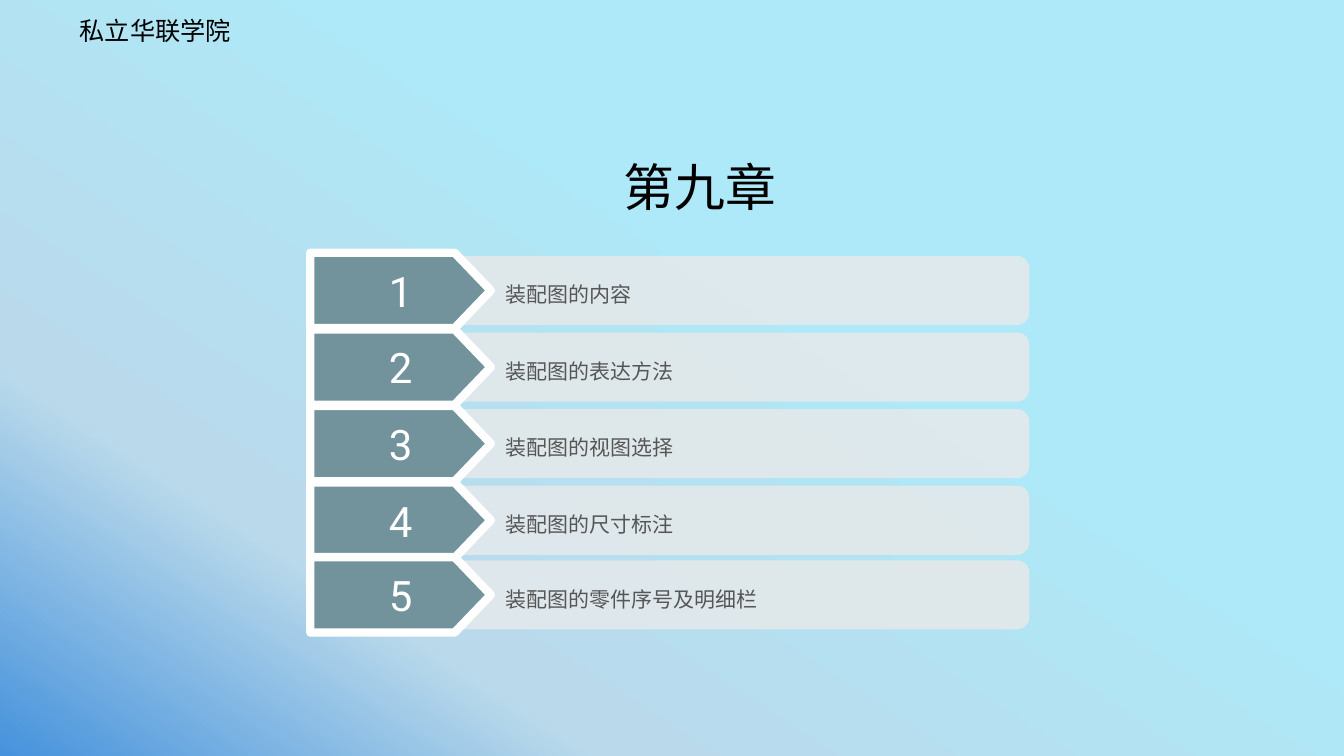
"""Build the chapter nine contents slide with five numbered section bars."""
import math

from lxml import etree
from pptx import Presentation
from pptx.dml.color import RGBColor
from pptx.enum import shapes, text
from pptx.oxml import ns
from pptx.util import Cm, Pt

COLORS = {
    "black": "000000",
    "white": "FFFFFF",
    "arrow": "72939C",
    "bar": "E3E9EB",
    "label": "565656",
    "deep": "4692DC",
    "haze": "BADAEB",
    "sky": "ADE9F8",
}
CJK_FONT = "Noto Sans CJK JP"
SECTIONS = [
    (6.45, "装配图的内容"),
    (8.38, "装配图的表达方法"),
    (10.31, "装配图的视图选择"),
    (12.24, "装配图的尺寸标注"),
    (14.12, "装配图的零件序号及明细栏"),
]
BAR_LEFT, BAR_WIDTH, BAR_HEIGHT, RADIUS = 11.56, 14.38, 1.74, 0.31
ARROW_LEFT, ARROW_WIDTH, ARROW_HEIGHT = 7.82, 4.55, 1.9


def write(shape, content, size, color, font="Roboto", align=text.PP_ALIGN.LEFT, spacing=1.0):
    """Put one formatted paragraph into a shape."""
    frame = shape.text_frame
    frame.text = content
    frame.word_wrap = True
    paragraph = frame.paragraphs[0]
    paragraph.alignment = align
    paragraph.line_spacing = spacing
    run = paragraph.runs[0]
    run.font.size = Pt(size)
    run.font.color.rgb = RGBColor.from_string(COLORS[color])
    run.font.name = font
    etree.SubElement(run.font._element, ns.qn("a:ea"), typeface=CJK_FONT)
    return frame


def paint(shape, color):
    """Give a shape a flat fill without shadow or outline."""
    shape.shadow.inherit = False
    shape.fill.solid()
    shape.fill.fore_color.rgb = RGBColor.from_string(COLORS[color])
    shape.line.fill.background()


presentation = Presentation()
presentation.slide_width, presentation.slide_height = Cm(33.87), Cm(19.05)
slide = presentation.slides.add_slide(presentation.slide_layouts[5])

background = slide.background.fill
background.gradient()
background.gradient_angle = 57
stops = background._fill._gradFill.find(ns.qn("a:gsLst"))
for stop in list(stops):
    stops.remove(stop)
for position, color in [(0, "deep"), (24, "haze"), (62, "sky"), (100, "sky")]:
    stop = etree.SubElement(stops, ns.qn("a:gs"), pos=str(position * 1000))
    etree.SubElement(stop, ns.qn("a:srgbClr"), val=COLORS[color])

school = slide.shapes.add_textbox(Cm(1.88), Cm(0.25), Cm(7.47), Cm(1.02))
frame = write(school, "私立华联学院", 18, "black", font=CJK_FONT)
frame.margin_left = frame.margin_right = frame.margin_top = frame.margin_bottom = Cm(0.13)

title = slide.shapes.title
title.left, title.top, title.width, title.height = Cm(10.13), Cm(4.22), Cm(15.01), Cm(1.45)
frame = write(title, "第九章", 36.3, "black", align=text.PP_ALIGN.CENTER, spacing=0.7)
frame.auto_size = text.MSO_AUTO_SIZE.NONE
frame.vertical_anchor = text.MSO_ANCHOR.TOP

for number, (top, label) in enumerate(SECTIONS, start=1):
    right, bottom = BAR_LEFT + BAR_WIDTH, top + BAR_HEIGHT
    outline = []
    for center_y, start in [(top + RADIUS, -90), (bottom - RADIUS, 0)]:
        for degrees in range(start, start + 91, 10):
            angle = math.radians(degrees)
            outline.append((Cm(right - RADIUS + RADIUS * math.cos(angle)),
                            Cm(center_y + RADIUS * math.sin(angle))))
    outline.append((Cm(BAR_LEFT), Cm(bottom)))
    builder = slide.shapes.build_freeform(Cm(BAR_LEFT), Cm(top))
    builder.add_line_segments(outline, close=True)
    bar = builder.convert_to_shape()
    paint(bar, "bar")
    fill_color = bar._element.spPr.find(ns.qn("a:solidFill"))[0]
    etree.SubElement(fill_color, ns.qn("a:alpha"), val="90000")
    frame = write(bar, label, 15, "label", spacing=1.3)
    frame.vertical_anchor = text.MSO_ANCHOR.MIDDLE
    frame.margin_left = Cm(1.17)
    frame.margin_right = frame.margin_top = frame.margin_bottom = 0

    arrow = slide.shapes.add_shape(
        shapes.MSO_SHAPE.PENTAGON, Cm(ARROW_LEFT), Cm(top + (BAR_HEIGHT - ARROW_HEIGHT) / 2),
        Cm(ARROW_WIDTH), Cm(ARROW_HEIGHT))
    arrow.adjustments[0] = 0.48
    paint(arrow, "arrow")
    arrow.line.color.rgb = RGBColor.from_string(COLORS["white"])
    arrow.line.width = Pt(6)
    etree.SubElement(arrow.line._ln, ns.qn("a:round"))
    frame = write(arrow, str(number), 30, "white", align=text.PP_ALIGN.CENTER)
    frame.vertical_anchor = text.MSO_ANCHOR.MIDDLE
    frame.margin_left = Cm(0.71)

presentation.save("out.pptx")
